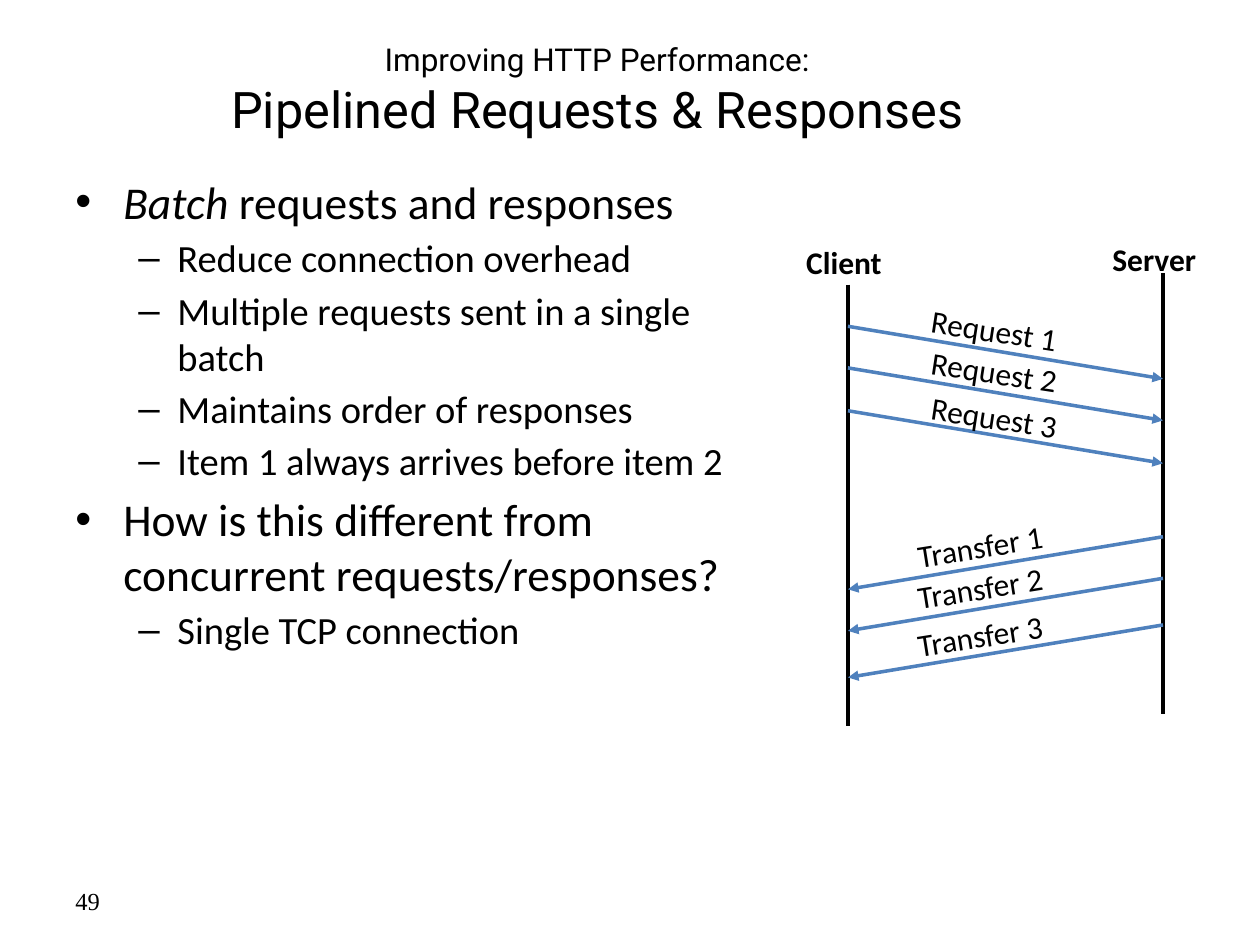
from lxml import etree
from pptx import Presentation
from pptx import util as u
from pptx.dml.color import RGBColor
from pptx.enum import shapes, text
from pptx.oxml.ns import qn

COLUMNS, ROWS = 100, 75
BLACK, BLUE = "000000", "4F81BD"


def color(value):
    return RGBColor.from_string(value)


def add_text(para, words, font="Calibri", size=18, bold=False, italic=False, ink=BLACK):
    span = para.add_run()
    span.text = words
    span.font.name, span.font.size = font, u.Pt(size)
    span.font.bold, span.font.italic = bold, italic
    span.font.color.rgb = color(ink)


class SlideBuilder:
    """Holds the deck, its grid and the current slide."""

    def __init__(self, deck):
        self.slide = deck.slides.add_slide(deck.slide_layouts[6])
        self.column = deck.slide_width / COLUMNS
        self.row = deck.slide_height / ROWS

    def place(self, x, y):
        return round(x * self.column), round(y * self.row)

    def box(self, x, y, width, height, anchor=text.MSO_ANCHOR.TOP, wrap=True, turn=0):
        box = self.slide.shapes.add_textbox(*self.place(x, y), *self.place(width, height))
        box.rotation = turn
        box.text_frame.word_wrap = wrap
        box.text_frame.vertical_anchor = anchor
        return box.text_frame

    def label(self, words, x, y, width, turn=0, bold=False):
        frame = self.box(x, y, width, 4, wrap=False, turn=turn)
        frame.auto_size = text.MSO_AUTO_SIZE.SHAPE_TO_FIT_TEXT
        add_text(frame.paragraphs[0], words, bold=bold)

    def bullet(self, para, spans, level):
        size, mark, margin, hang = [(26, "•", 0.38, 0.38), (22, "–", 0.81, 0.31)][level]
        para.level = level
        para.space_before = u.Pt(round(size * 0.16, 1))
        properties = para._p.get_or_add_pPr()
        properties.set("marL", str(u.Inches(margin)))
        properties.set("indent", str(-u.Inches(hang)))
        font = etree.SubElement(properties, qn("a:buFont"))
        font.set("typeface", "Arial")
        etree.SubElement(properties, qn("a:buChar")).set("char", mark)
        for words, italic in spans:
            add_text(para, words, size=size, italic=italic)

    def line(self, start, end, ink=BLACK, arrow=False):
        line = self.slide.shapes.add_connector(
            shapes.MSO_CONNECTOR.STRAIGHT, *self.place(*start), *self.place(*end))
        line.line.color.rgb = color(ink)
        line.line.width = u.Pt(2)
        if arrow:
            head = etree.SubElement(line.line._get_or_add_ln(), qn("a:tailEnd"))
            head.set("type", "triangle")
        etree.SubElement(line._element.spPr, qn("a:effectLst"))


def main():
    deck = Presentation()
    deck.slide_width, deck.slide_height = u.Inches(10), u.Inches(7.5)
    page = SlideBuilder(deck)

    # Slide number
    number = page.box(5, 69.5, 23.3, 4, text.MSO_ANCHOR.MIDDLE)
    add_text(number.paragraphs[0], "49", font="Times New Roman", size=14)

    # Title
    para = page.box(3.3, 2.5, 88.2, 9.2, text.MSO_ANCHOR.MIDDLE).paragraphs[0]
    para.alignment = text.PP_ALIGN.CENTER
    add_text(para, "Improving HTTP Performance:", font="Roboto", size=18)
    para.add_line_break()
    add_text(para, "Pipelined Requests & Responses", font="Roboto", size=28.8)

    # Bullets: level, then spans of (words, italic)
    body = page.box(5, 13.3, 57.5, 57.5)
    bullets = [
        (0, [("Batch", True), (" requests and responses", False)]),
        (1, [("Reduce connection overhead", False)]),
        (1, [("Multiple requests sent in a single batch", False)]),
        (1, [("Maintains order of responses", False)]),
        (1, [("Item 1 always arrives before item 2", False)]),
        (0, [("How is this different from concurrent requests/responses?", False)]),
        (1, [("Single TCP connection", False)]),
    ]
    for index, (level, spans) in enumerate(bullets):
        para = body.add_paragraph() if index else body.paragraphs[0]
        page.bullet(para, spans, level)

    # Timelines of both sides
    client, server = 67.3, 92.3
    for x, top in ((client, 22.6), (server, 21.7)):
        page.line((x, top), (x, top + 35))
    page.label("Client", 63, 18.8, 8.1, bold=True)
    page.label("Server", 87.3, 18.6, 8.7, bold=True)

    # Messages: name, from, to, label column, width, turn, (arrow row, label row)
    drop = 4.17
    messages = [
        ("Request", client, server, 72.9, 12.2, 8.7,
         [(25.9, 24.2), (29.2, 27.5), (32.6, 31.1)]),
        ("Transfer", server, client, 71.8, 12.4, 350.9,
         [(42.6, 41.3), (45.9, 44.6), (49.6, 48.4)]),
    ]
    for name, start, end, x, width, turn, rows in messages:
        for count, (arrow_row, label_row) in enumerate(rows, 1):
            page.line((start, arrow_row), (end, arrow_row + drop), BLUE, arrow=True)
            page.label(f"{name} {count}", x, label_row, width, turn)

    deck.save("out.pptx")


if __name__ == "__main__":
    main()
